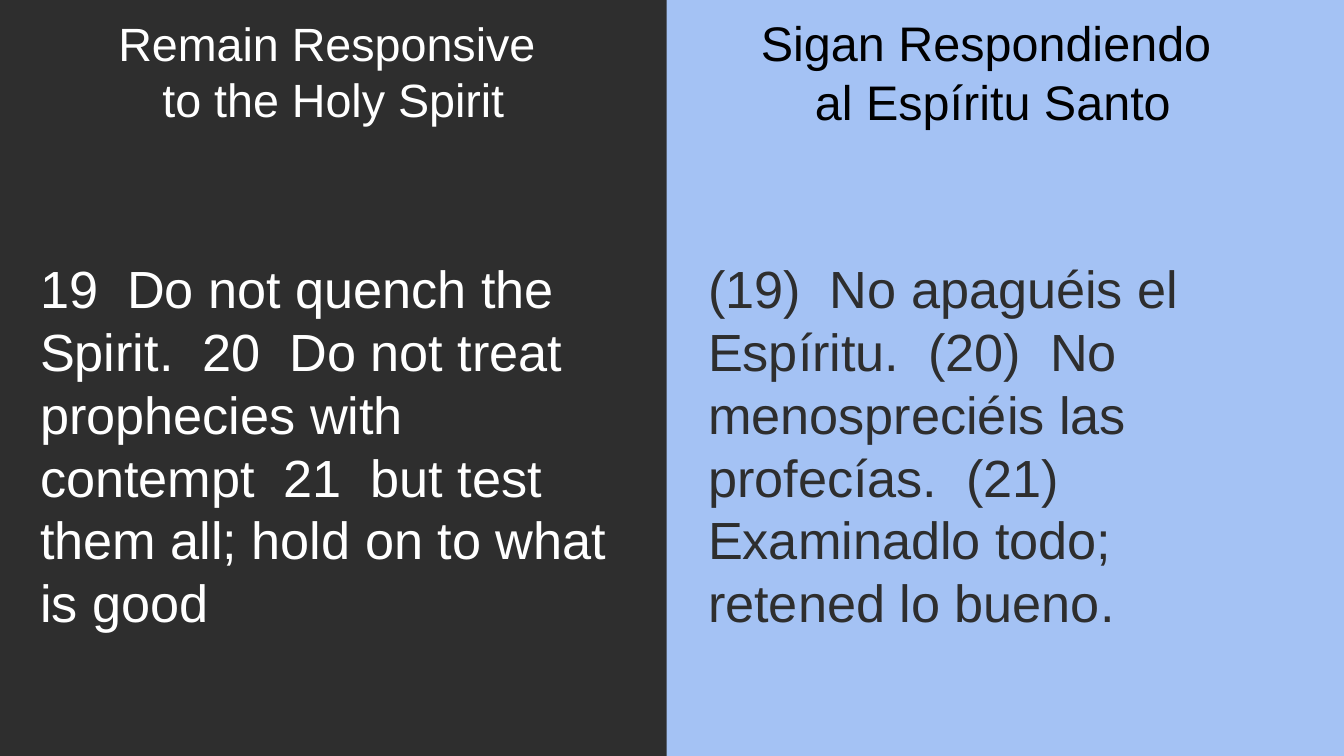
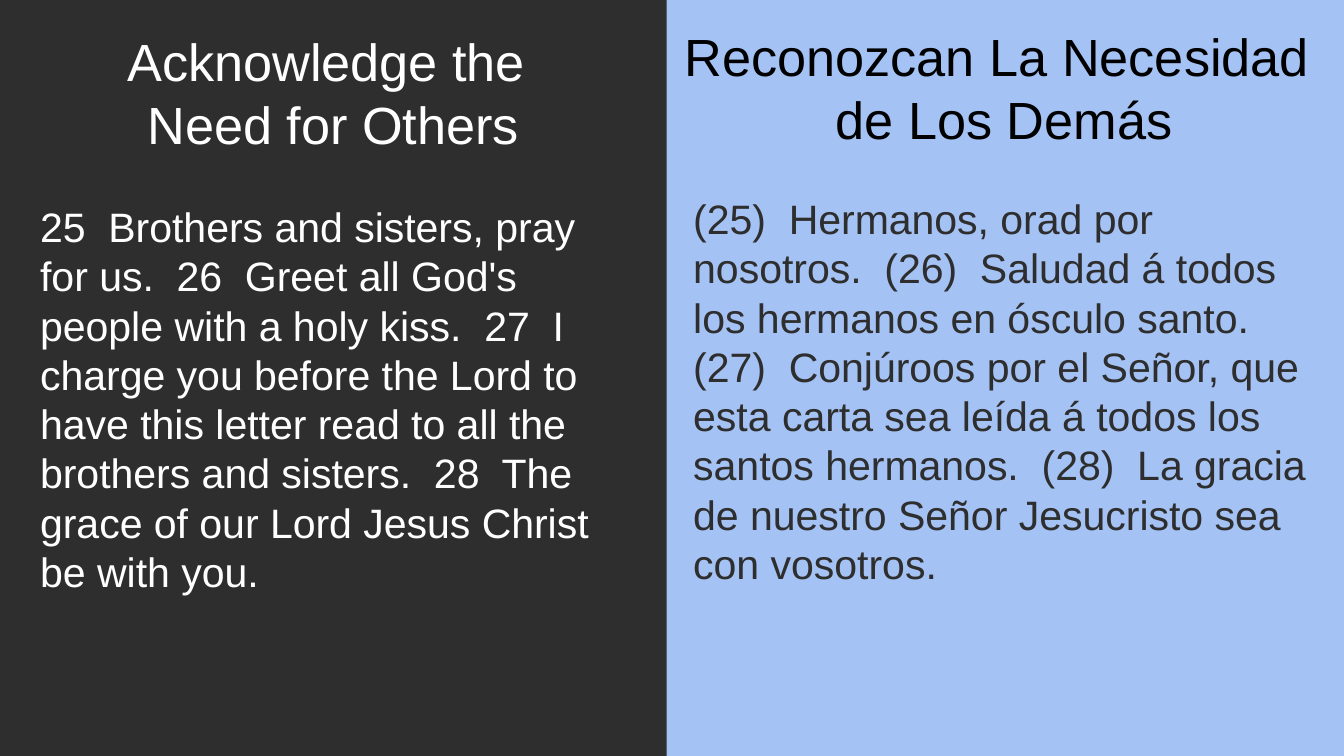
from dataclasses import dataclass

from pptx import Presentation
from pptx.dml.color import RGBColor
from pptx.enum.shapes import MSO_SHAPE
from pptx.enum.text import MSO_ANCHOR, PP_ALIGN
from pptx.presentation import Presentation as Deck
from pptx.shapes.autoshape import Shape
from pptx.slide import Slide
from pptx.util import Pt

CHARCOAL = RGBColor(0x2E, 0x2E, 0x2E)
SKY = RGBColor(0xA4, 0xC2, 0xF4)
WHITE = RGBColor(0xFF, 0xFF, 0xFF)
BLACK = RGBColor(0x00, 0x00, 0x00)

FONT = "Arial"
INSET = Pt(7.2)
SLIDE_W, SLIDE_H = Pt(720), Pt(405)
SPLIT = Pt(357.12)


@dataclass(frozen=True)
class Box:
    left: float
    top: float
    width: float
    height: float

    def emu(self) -> tuple[int, int, int, int]:
        return Pt(self.left), Pt(self.top), Pt(self.width), Pt(self.height)


@dataclass(frozen=True)
class Passage:
    """One language's half of a slide: a centred title above its verses."""
    title: str
    title_box: Box
    title_size: float
    verses: str
    verses_box: Box
    verses_size: float


@dataclass(frozen=True)
class Theme:
    """Colours of one language's half."""
    fill: RGBColor
    title: RGBColor
    verses: RGBColor
    outlined: bool


ENGLISH = Theme(CHARCOAL, WHITE, WHITE, outlined=True)
SPANISH = Theme(SKY, BLACK, CHARCOAL, outlined=False)

SLIDES = [
    (
        Passage(
            "Remain Responsive \nto the Holy Spirit",
            Box(0, 0.72, 357.12, 136.08), 25,
            "19  Do not quench the Spirit.  20  Do not treat prophecies with "
            "contempt  21  but test them all; hold on to what is good",
            Box(14.4, 130.32, 324.72, 241.92), 28,
        ),
        Passage(
            "Sigan Respondiendo \nal Espíritu Santo",
            Box(350.64, 0, 362.88, 84.96), 26,
            "(19)  No apaguéis el Espíritu.  (20)  No menospreciéis las "
            "profecías.  (21)  Examinadlo todo; retened lo bueno.",
            Box(372.24, 130.32, 331.92, 205.2), 28,
        ),
    ),
    (
        Passage(
            "Acknowledge the \nNeed for Others",
            Box(0, 8.64, 357.12, 136.08), 28,
            "25  Brothers and sisters, pray for us.  26  Greet all God's people "
            "with a holy kiss.  27  I charge you before the Lord to have this "
            "letter read to all the brothers and sisters.  28  The grace of our "
            "Lord Jesus Christ be with you.",
            Box(14.4, 100.8, 324.72, 241.92), 22,
        ),
        Passage(
            "Reconozcan La Necesidad \nde Los Demás",
            Box(356.4, 5.76, 362.88, 101.52), 28,
            "(25)  Hermanos, orad por nosotros.  (26)  Saludad á todos los "
            "hermanos en ósculo santo.  (27)  Conjúroos por el Señor, que esta "
            "carta sea leída á todos los santos hermanos.  (28)  La gracia de "
            "nuestro Señor Jesucristo sea con vosotros.",
            Box(364.32, 96.48, 347.76, 230.4), 22,
        ),
    ),
]


def add_panel(slide: Slide, left: int, top: int, width: int, height: int,
              fill: RGBColor, outlined: bool = False) -> Shape:
    sp = slide.shapes.add_shape(MSO_SHAPE.RECTANGLE, left, top, width, height)
    sp.shadow.inherit = False
    sp.fill.solid()
    sp.fill.fore_color.rgb = fill
    if outlined:
        sp.line.color.rgb = fill
        sp.line.width = Pt(2.25)
    else:
        sp.line.fill.background()
    return sp


def write(sp: Shape, text: str, size: float, color: RGBColor, align: PP_ALIGN) -> None:
    tf = sp.text_frame
    tf.word_wrap = True
    tf.vertical_anchor = MSO_ANCHOR.TOP
    tf.margin_left = tf.margin_right = tf.margin_top = tf.margin_bottom = INSET
    tf.text = text
    for p in tf.paragraphs:
        p.alignment = align
        for r in p.runs:
            r.font.name = FONT
            r.font.size = Pt(size)
            r.font.color.rgb = color


def add_title(slide: Slide, passage: Passage, theme: Theme) -> None:
    sp = slide.shapes.add_textbox(*passage.title_box.emu())
    write(sp, passage.title, passage.title_size, theme.title, PP_ALIGN.CENTER)


def add_verses(slide: Slide, passage: Passage, theme: Theme) -> None:
    sp = add_panel(slide, *passage.verses_box.emu(), theme.fill, theme.outlined)
    write(sp, passage.verses, passage.verses_size, theme.verses, PP_ALIGN.LEFT)


def add_bilingual_slide(prs: Deck, english: Passage, spanish: Passage) -> None:
    slide = prs.slides.add_slide(prs.slide_layouts[6])
    slide.background.fill.solid()
    slide.background.fill.fore_color.rgb = ENGLISH.fill
    add_panel(slide, SPLIT, 0, SLIDE_W - SPLIT, SLIDE_H, SPANISH.fill)
    halves = ((english, ENGLISH), (spanish, SPANISH))
    for add_part in (add_title, add_verses):
        for passage, theme in halves:
            add_part(slide, passage, theme)


def main() -> None:
    prs = Presentation()
    prs.slide_width, prs.slide_height = SLIDE_W, SLIDE_H
    for english, spanish in SLIDES:
        add_bilingual_slide(prs, english, spanish)
    prs.save("out.pptx")


if __name__ == "__main__":
    main()
